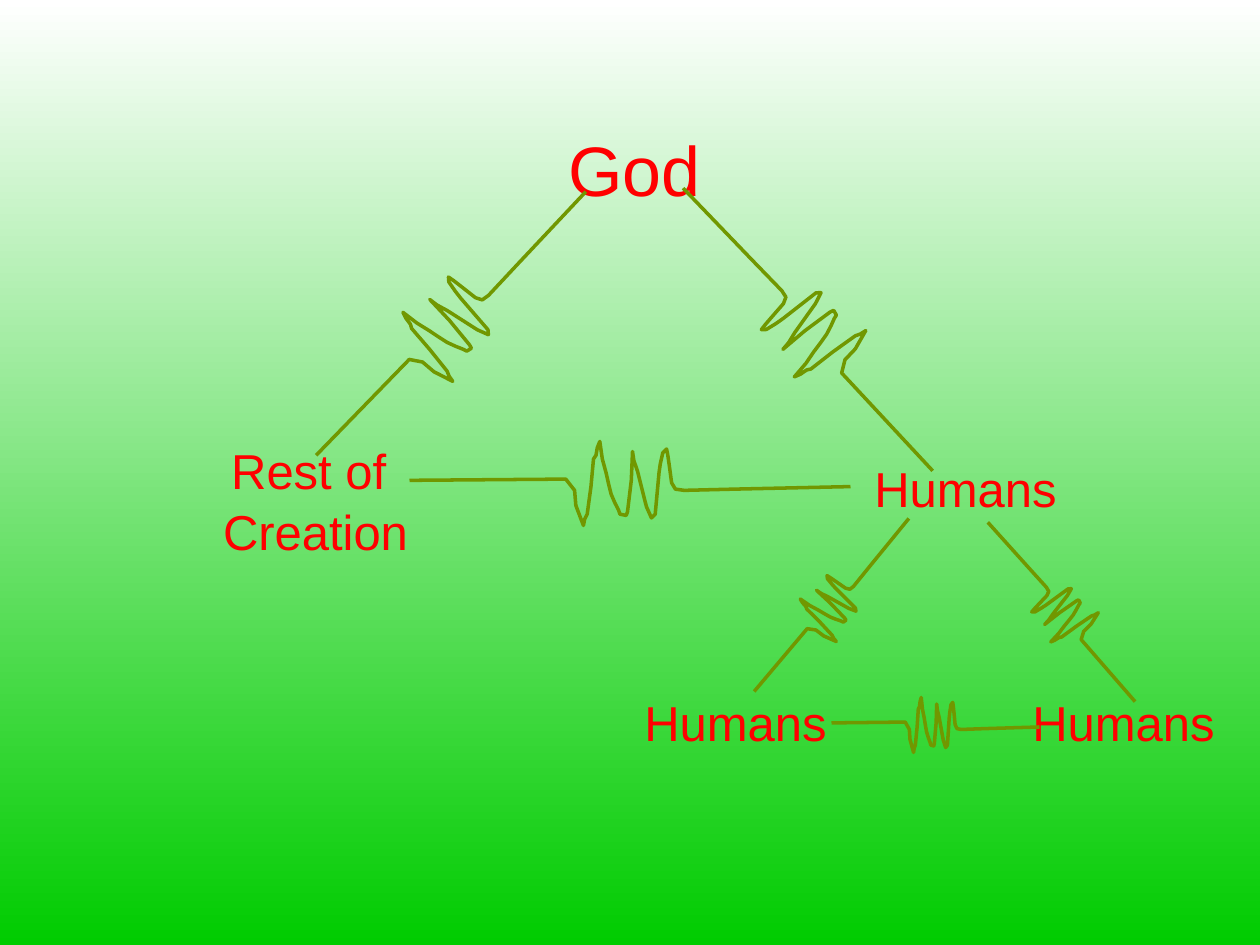
from pptx import Presentation
from pptx.dml.color import RGBColor
from pptx.enum.text import MSO_AUTO_SIZE, PP_ALIGN
from pptx.util import Emu, Pt

PX = 914400 // 126
COLORS = {"sky": "FFFFFF", "grass": "00CC00", "label": "FF0000", "wave": "719700"}

# Broken bond, drawn top to bottom as (across, along)
WAVE_WIDTH, WAVE_LENGTH = 67, 350
WAVE = [
    (36, 0), (38, 92), (39, 132), (38, 139), (33, 142), (18, 144), (11, 145),
    (6, 146), (9, 149), (18, 151), (25, 152), (58, 155), (61, 158), (52, 162),
    (40, 165), (24, 169), (15, 172), (8, 173), (31, 174), (56, 177), (59, 178),
    (58, 183), (55, 184), (49, 187), (42, 190), (34, 192), (25, 194), (14, 197),
    (0, 199), (5, 201), (11, 202), (14, 204), (36, 206), (58, 209), (62, 211),
    (67, 212), (59, 215), (51, 218), (39, 219), (30, 226), (31, 350),
]

# Lines of text, left, top, width, height, size in points
LABELS = [
    (["God"], 472, 116, 325, 97, 40),
    (["Rest of ", "Creation"], 179, 431, 273, 131, 28),
    (["Humans"], 850, 449, 231, 72, 28),
    (["Humans"], 1019, 683, 209, 72, 28),
    (["Humans"], 620, 683, 231, 72, 28),
]

# Left, top, width, length, rotation in degrees
BONDS = [
    (588, 263, 84, 441, 90),
    (804, 489, 55, 232, 40.8),
    (409, 135, 84, 377, 44.7),
    (766, 141, 84, 377, 317.6),
    (1034, 496, 55, 232, 319.6),
    (908, 621, 55, 208, 90),
]


def px(length):
    return Emu(length * PX)


def rgb(name):
    return RGBColor.from_string(COLORS[name])


def paint_background(slide):
    fill = slide.background.fill
    fill.gradient()
    fill.gradient_angle = 270
    for stop, name in zip(fill.gradient_stops, ("sky", "grass")):
        stop.color.rgb = rgb(name)


def add_label(slide, lines, left, top, width, height, size):
    label = slide.shapes.add_textbox(px(left), px(top), px(width), px(height))
    frame = label.text_frame
    frame.word_wrap = True
    frame.auto_size = MSO_AUTO_SIZE.SHAPE_TO_FIT_TEXT
    frame.text = "\n".join(lines)
    for paragraph in frame.paragraphs:
        paragraph.alignment = PP_ALIGN.CENTER
        paragraph.line_spacing = 1.05
        for run in paragraph.runs:
            run.font.name = "Arial"
            run.font.size = Pt(size)
            run.font.color.rgb = rgb("label")


def add_bond(slide, left, top, width, length, rotation):
    scale = (px(width) / WAVE_WIDTH, px(length) / WAVE_LENGTH)
    builder = slide.shapes.build_freeform(*WAVE[0], scale=scale)
    builder.add_line_segments(WAVE[1:], close=False)
    bond = builder.convert_to_shape(px(left), px(top))
    bond.rotation = rotation
    bond.shadow.inherit = False
    bond.fill.background()
    bond.line.color.rgb = rgb("wave")
    bond.line.width = Pt(2)


def main():
    prs = Presentation()
    prs.slide_width, prs.slide_height = px(1260), px(945)
    slide = prs.slides.add_slide(prs.slide_layouts[6])
    paint_background(slide)
    for label in LABELS:
        add_label(slide, *label)
    for bond in BONDS:
        add_bond(slide, *bond)
    prs.save("out.pptx")


if __name__ == "__main__":
    main()
